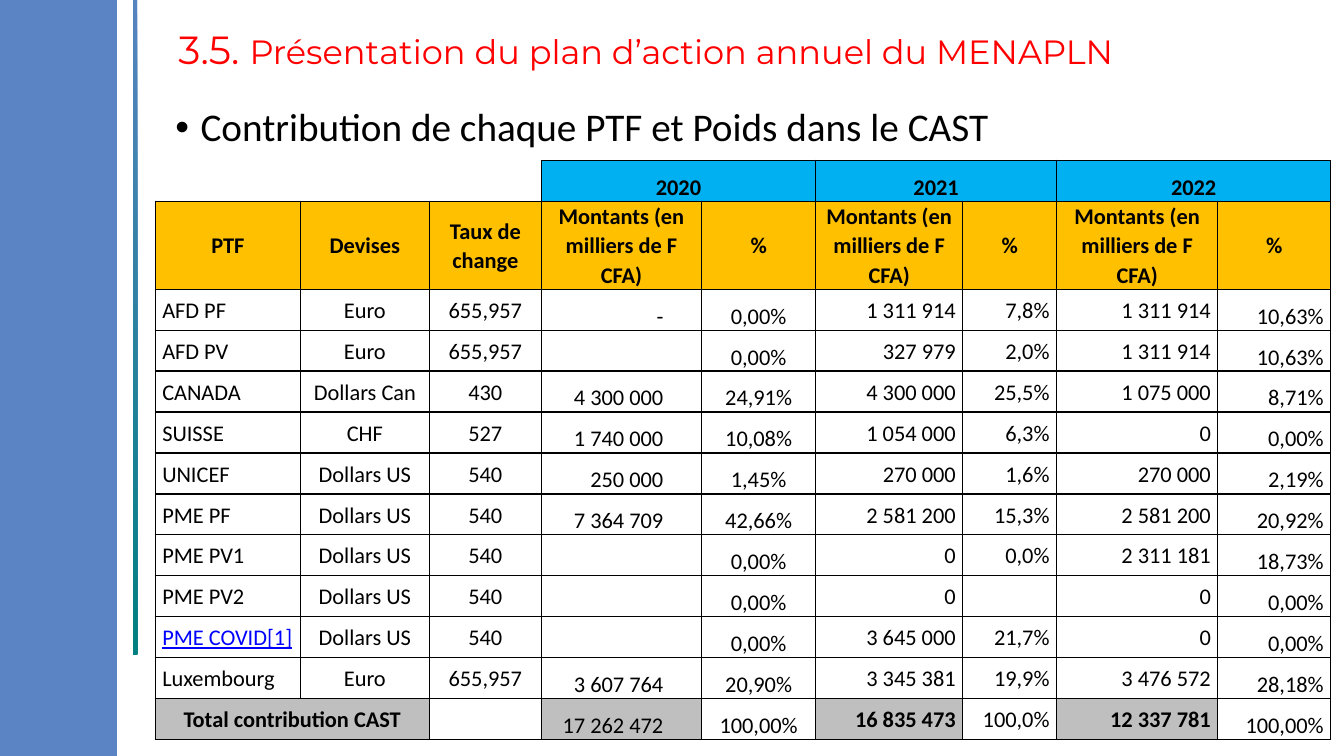
from lxml import etree
from pptx import Presentation
from pptx.dml.color import RGBColor
from pptx.enum.shapes import MSO_SHAPE
from pptx.enum.text import MSO_ANCHOR, MSO_AUTO_SIZE, PP_ALIGN
from pptx.oxml.ns import qn
from pptx.util import Inches, Pt

LEFT, CENTER, RIGHT = PP_ALIGN.LEFT, PP_ALIGN.CENTER, PP_ALIGN.RIGHT
TOP, MIDDLE, BOTTOM = MSO_ANCHOR.TOP, MSO_ANCHOR.MIDDLE, MSO_ANCHOR.BOTTOM
RECTANGLE = MSO_SHAPE.RECTANGLE
NO_AUTOFIT = MSO_AUTO_SIZE.NONE

SLIDE_WIDTH, SLIDE_HEIGHT = Inches(13.33), Inches(7.5)
BLUE, TEAL, RED, BLACK = "5A84C3", "008080", "FF0000", "000000"
YEAR_BLUE, HEADER_GOLD, TOTAL_GREY, NOTE_BLUE = "00B0F0", "FFC000", "BFBFBF", "0000FF"

# Table grid, in percent of the slide's width and height
COLUMN_SHARES = [10.8, 9.6, 8.33, 11.93, 8.48, 10.95, 6.98, 12, 8.4]
ROW_SHARE, HEADER_SHARE = 5.42, 11.07
COLUMN_STYLES = [
    (LEFT, MIDDLE), (CENTER, MIDDLE), (CENTER, MIDDLE),
    (RIGHT, BOTTOM), (CENTER, BOTTOM),
    (RIGHT, MIDDLE), (RIGHT, MIDDLE),
    (RIGHT, MIDDLE), (RIGHT, BOTTOM),
]
CELL_INSET, AMOUNT_2020_INSET = Inches(0.07), Inches(0.38)
AMOUNT_2020 = 3
YEARS = {3: "2020", 5: "2021", 7: "2022"}
HEADERS = ["PTF", "Devises", "Taux de change"] + ["Montants (en milliers de F CFA)", "%"] * 3
NOTED_PARTNER = "PME COVID[1]"
PARTNERS = [
    ("AFD PF", "Euro", "655,957", "-", "0,00%", "1 311 914", "7,8%", "1 311 914", "10,63%"),
    ("AFD PV", "Euro", "655,957", "", "0,00%", "327 979", "2,0%", "1 311 914", "10,63%"),
    ("CANADA", "Dollars Can", "430", "4 300 000", "24,91%", "4 300 000", "25,5%", "1 075 000", "8,71%"),
    ("SUISSE", "CHF", "527", "1 740 000", "10,08%", "1 054 000", "6,3%", "0", "0,00%"),
    ("UNICEF", "Dollars US", "540", "250 000", "1,45%", "270 000", "1,6%", "270 000", "2,19%"),
    ("PME PF", "Dollars US", "540", "7 364 709", "42,66%", "2 581 200", "15,3%", "2 581 200", "20,92%"),
    ("PME PV1", "Dollars US", "540", "", "0,00%", "0", "0,0%", "2 311 181", "18,73%"),
    ("PME PV2", "Dollars US", "540", "", "0,00%", "0", "", "0", "0,00%"),
    (NOTED_PARTNER, "Dollars US", "540", "", "0,00%", "3 645 000", "21,7%", "0", "0,00%"),
    ("Luxembourg", "Euro", "655,957", "3 607 764", "20,90%", "3 345 381", "19,9%", "3 476 572", "28,18%"),
]
TOTALS = ("Total contribution CAST", "", "", "17 262 472", "100,00%",
          "16 835 473", "100,0%", "12 337 781", "100,00%")


def rgb(value):
    return RGBColor.from_string(value)


def across(percent):
    return round(SLIDE_WIDTH * percent / 100)


def down(percent):
    return round(SLIDE_HEIGHT * percent / 100)


def area(left, top, width, height):
    """Turn percentages of the slide into a position and a size."""
    return across(left), down(top), across(width), down(height)


def format_run(run, size, color=BLACK, font="Calibri", bold=False, underline=False):
    run.font.size = Pt(size)
    run.font.name = font
    run.font.color.rgb = rgb(color)
    run.font.bold = bold
    run.font.underline = underline


def add_bar(slide, place, color):
    bar = slide.shapes.add_shape(RECTANGLE, *place)
    bar.shadow.inherit = False
    bar.line.fill.background()
    bar.fill.solid()
    bar.fill.fore_color.rgb = rgb(color)
    return bar


def fade_from_corner(bar, corner_color, far_color):
    """Fill with a round gradient that starts at the bottom right corner."""
    bar.fill.gradient()
    for stop, color in zip(bar.fill.gradient_stops, (corner_color, far_color)):
        stop.color.rgb = rgb(color)
    gradient = bar.fill._xPr.find(qn("a:gradFill"))
    gradient.remove(gradient.find(qn("a:lin")))
    circle = etree.SubElement(gradient, qn("a:path"), {"path": "circle"})
    etree.SubElement(circle, qn("a:fillToRect"), {"l": "100000", "t": "100000"})


def place_text(placeholder, place, anchor):
    """Move a placeholder and return its first paragraph, ready for text."""
    placeholder.left, placeholder.top, placeholder.width, placeholder.height = place
    frame = placeholder.text_frame
    frame.auto_size = NO_AUTOFIT
    frame.word_wrap = True
    frame.vertical_anchor = anchor
    paragraph = frame.paragraphs[0]
    paragraph.alignment = LEFT
    paragraph.line_spacing = 0.9
    paragraph.space_before = Pt(0)
    return paragraph


def add_bullet(paragraph):
    properties = paragraph._p.get_or_add_pPr()
    properties.set("marL", str(Inches(0.25)))
    properties.set("indent", str(-Inches(0.25)))
    etree.SubElement(properties, qn("a:buFont"), {"typeface": "Arial"})
    etree.SubElement(properties, qn("a:buChar"), {"char": "•"})


def set_borders(cell, drawn_sides):
    properties = cell._tc.get_or_add_tcPr()
    for side in "LRTB":
        line = etree.SubElement(properties, qn(f"a:ln{side}"), {"w": str(Pt(1))})
        if side in drawn_sides:
            fill = etree.SubElement(line, qn("a:solidFill"))
            etree.SubElement(fill, qn("a:srgbClr"), {"val": BLACK})
        else:
            etree.SubElement(line, qn("a:noFill"))


def fill_cell(cell, text, style, fill=None, bold=False, borders="LRTB", right_inset=CELL_INSET):
    set_borders(cell, borders)
    if fill:
        cell.fill.solid()
        cell.fill.fore_color.rgb = rgb(fill)
    else:
        cell.fill.background()
    cell.margin_left, cell.margin_right = CELL_INSET, right_inset
    cell.margin_top = cell.margin_bottom = 0
    cell.text_frame.text = text
    paragraph = cell.text_frame.paragraphs[0]
    paragraph.alignment, cell.vertical_anchor = style
    paragraph.line_spacing = 1.07
    noted = text == NOTED_PARTNER
    for run in paragraph.runs:
        format_run(run, 16, NOTE_BLUE if noted else BLACK, bold=bold, underline=noted)


def add_contributions(slide):
    row_shares = [ROW_SHARE, HEADER_SHARE] + [ROW_SHARE] * (len(PARTNERS) + 1)
    place = area(11.55, 21.2, sum(COLUMN_SHARES), sum(row_shares))
    table = slide.shapes.add_table(len(row_shares), len(COLUMN_SHARES), *place).table
    table.first_row = table.horz_banding = False
    for column, share in zip(table.columns, COLUMN_SHARES):
        column.width = across(share)
    for row, share in zip(table.rows, row_shares):
        row.height = down(share)

    total_row = len(row_shares) - 1
    for c, (header, style) in enumerate(zip(HEADERS, COLUMN_STYLES)):
        if c < AMOUNT_2020:
            fill_cell(table.cell(0, c), "", style, borders="RB" if c == AMOUNT_2020 - 1 else "B")
        else:
            fill_cell(table.cell(0, c), YEARS.get(c, ""), (CENTER, BOTTOM), YEAR_BLUE, True)
        fill_cell(table.cell(1, c), header, (CENTER, MIDDLE), HEADER_GOLD, True)
        inset = AMOUNT_2020_INSET if c == AMOUNT_2020 else CELL_INSET
        for r, partner in enumerate(PARTNERS, start=2):
            fill_cell(table.cell(r, c), partner[c], style, right_inset=inset)
        shaded = c < 2 or c in YEARS
        fill_cell(table.cell(total_row, c), TOTALS[c], (CENTER, MIDDLE) if c < 2 else style,
                  TOTAL_GREY if shaded else None, shaded and c != AMOUNT_2020, right_inset=inset)

    for c in YEARS:
        table.cell(0, c).merge(table.cell(0, c + 1))
    table.cell(total_row, 0).merge(table.cell(total_row, 1))


def main():
    presentation = Presentation()
    presentation.slide_width, presentation.slide_height = SLIDE_WIDTH, SLIDE_HEIGHT
    slide = presentation.slides.add_slide(presentation.slide_layouts[1])

    add_bar(slide, area(-0.83, -2, 9.53, 104.67), BLUE)
    accent = add_bar(slide, area(9.9, -3.6, 0.3, 90.13), BLUE)
    fade_from_corner(accent, TEAL, BLUE)

    heading = place_text(slide.shapes.title, area(12.53, 0, 86.48, 13.6), MIDDLE)
    for text, size in (("3.5. ", 28), ("Présentation du plan d’action annuel du MENAPLN", 24)):
        part = heading.add_run()
        part.text = text
        format_run(part, size, RED, "Montserrat")

    topic = place_text(slide.placeholders[1], area(12.3, 13.6, 86.25, 63.47), TOP)
    add_bullet(topic)
    topic.text = "Contribution de chaque PTF et Poids dans le CAST"
    format_run(topic.runs[0], 28)

    add_contributions(slide)
    presentation.save("out.pptx")


if __name__ == "__main__":
    main()
